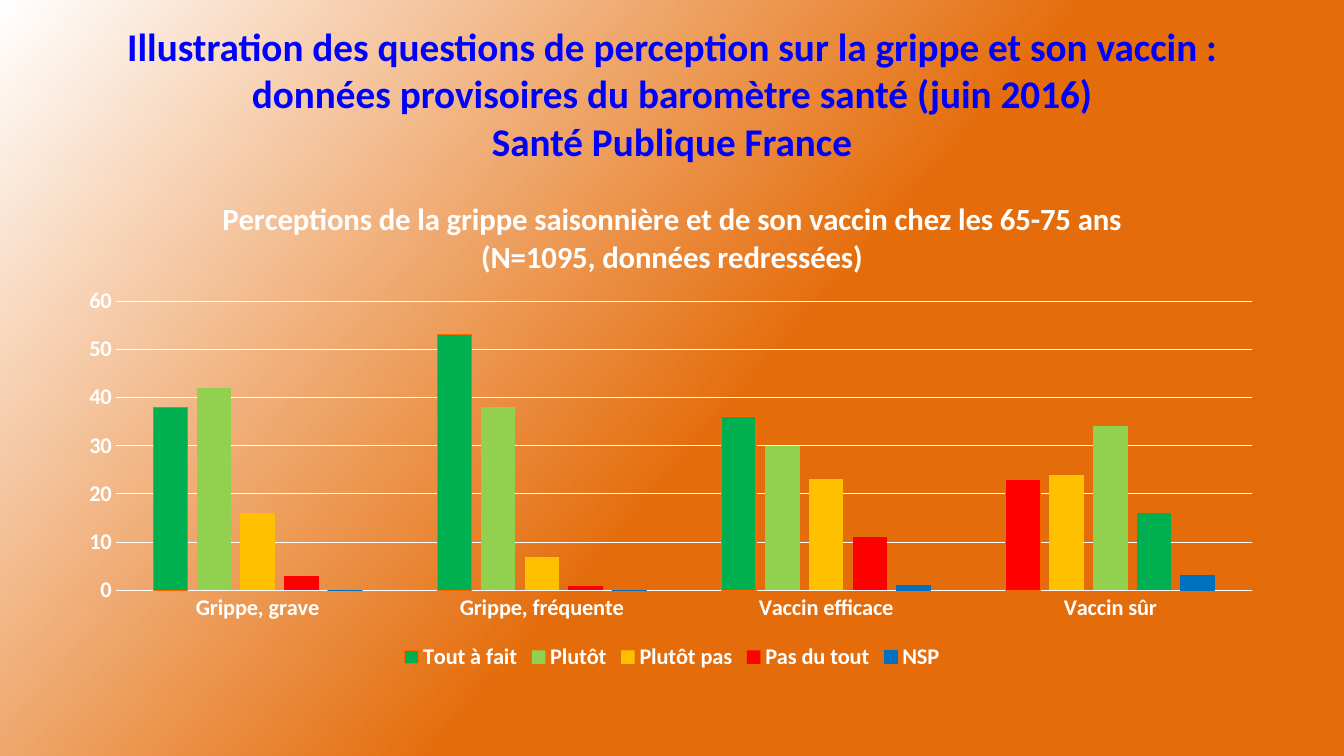
from dataclasses import dataclass

from lxml import etree
from pptx import Presentation
from pptx import util as u
from pptx.chart import data as chart_data
from pptx.dml import color
from pptx.enum import chart as kinds
from pptx.enum import text
from pptx.oxml import ns


@dataclass(frozen=True)
class Theme:
    font: str = "Calibri"
    orange: str = "E46C0A"
    white: str = "FFFFFF"
    blue: str = "0000FF"
    outline: str = "FF6600"
    green: str = "00B050"
    lime: str = "92D050"
    amber: str = "FFC000"
    red: str = "FF0000"
    azure: str = "0070C0"
    heading: int = 28
    chart_heading: int = 22
    label: int = 16
    base: int = 10
    hairline: float = 0.75


THEME = Theme()
CATEGORIES = ["Grippe, grave", "Grippe, fréquente", "Vaccin efficace", "Vaccin sûr"]
REVERSED_CATEGORY = CATEGORIES.index("Vaccin sûr")
SERIES = [
    ("Tout à fait", [38, 53, 36, 23], THEME.green, THEME.red, THEME.outline),
    ("Plutôt", [42, 38, 30, 24], THEME.lime, THEME.amber, None),
    ("Plutôt pas", [16, 7, 23, 34], THEME.amber, THEME.lime, None),
    ("Pas du tout", [3, 1, 11, 16], THEME.red, THEME.green, None),
    ("NSP", [0, 0, 1, 3], THEME.azure, THEME.azure, THEME.azure),
]


def rgb(value):
    return color.RGBColor.from_string(value)


def style_font(font, size, tint=THEME.white, bold=True):
    font.name = THEME.font
    font.size = u.Pt(size)
    font.bold = bold
    font.color.rgb = rgb(tint)


def write(para, words, **style):
    para.text = words
    para.alignment = text.PP_ALIGN.CENTER
    for span in para.runs:
        style_font(span.font, **style)


def style_line(line, tint):
    if tint is None:
        line.fill.background()
        return
    line.color.rgb = rgb(tint)
    line.width = u.Pt(THEME.hairline)


def paint(form, fill, outline):
    form.fill.solid()
    form.fill.fore_color.rgb = rgb(fill)
    style_line(form.line, outline)


def paint_background(page):
    fill = page.background.fill
    fill.gradient()
    fill.gradient_angle = 139
    stops = [(0.45, THEME.orange), (1, THEME.white)]
    for stop, (position, tint) in zip(fill.gradient_stops, stops):
        stop.position = position
        stop.color.rgb = rgb(tint)


def add_heading(page, words):
    box = page.shapes.add_textbox(u.Pt(48), u.Pt(21.6), u.Pt(864), u.Pt(90))
    frame = box.text_frame
    frame.word_wrap = True
    frame.vertical_anchor = text.MSO_ANCHOR.MIDDLE
    write(frame.paragraphs[0], words, size=THEME.heading, tint=THEME.blue)


def place_plot(chart, **fractions):
    plot_area = chart.plots[0]._element.getparent()
    for old in plot_area.findall(ns.qn("c:layout")):
        plot_area.remove(old)
    layout = etree.Element(ns.qn("c:layout"))
    plot_area.insert(0, layout)
    manual = etree.SubElement(layout, ns.qn("c:manualLayout"))
    settings = {"layoutTarget": "inner", "xMode": "edge", "yMode": "edge", **fractions}
    for name, value in settings.items():
        etree.SubElement(manual, ns.qn(f"c:{name}")).set("val", str(value))


def style_axis(axis, line):
    axis.major_tick_mark = kinds.XL_TICK_MARK.NONE
    axis.minor_tick_mark = kinds.XL_TICK_MARK.NONE
    style_font(axis.tick_labels.font, THEME.label)
    style_line(axis.format.line, line)


def add_column_chart(page, heading):
    data = chart_data.CategoryChartData()
    data.categories = CATEGORIES
    for name, values, *_ in SERIES:
        data.add_series(name, values)
    chart = page.shapes.add_chart(
        kinds.XL_CHART_TYPE.COLUMN_CLUSTERED,
        u.Pt(48), u.Pt(126), u.Pt(864), u.Pt(356.4), data,
    ).chart
    style_font(chart.font, THEME.base, bold=False)
    write(chart.chart_title.text_frame.paragraphs[0], heading, size=THEME.chart_heading)
    chart.chart_title.include_in_layout = False

    style_axis(chart.category_axis, THEME.white)
    values_axis = chart.value_axis
    style_axis(values_axis, None)
    values_axis.minimum_scale = 0
    values_axis.maximum_scale = 60
    values_axis.major_unit = 10
    style_line(values_axis.major_gridlines.format.line, THEME.white)

    chart.has_legend = True
    chart.legend.position = kinds.XL_LEGEND_POSITION.BOTTOM
    chart.legend.include_in_layout = False
    style_font(chart.legend.font, THEME.label)

    plot = chart.plots[0]
    plot.vary_by_categories = False
    plot.gap_width = 219
    plot.overlap = -27
    for series, (_, _, fill, reversed_fill, outline) in zip(plot.series, SERIES):
        series.invert_if_negative = False
        paint(series.format, fill, outline)
        if reversed_fill != fill:
            paint(series.points[REVERSED_CATEGORY].format, reversed_fill, outline)
    place_plot(chart, x=0.04, y=0.25, w=0.94, h=0.58)


def main():
    deck = Presentation()
    deck.slide_width, deck.slide_height = u.Pt(960), u.Pt(540)
    page = deck.slides.add_slide(deck.slide_layouts[6])
    paint_background(page)
    add_heading(
        page,
        "Illustration des questions de perception sur la grippe et son vaccin : "
        "données provisoires du baromètre santé (juin 2016)\nSanté Publique France",
    )
    add_column_chart(
        page,
        "Perceptions de la grippe saisonnière et de son vaccin chez les 65-75 ans "
        "(N=1095, données redressées)",
    )
    deck.save("out.pptx")


if __name__ == "__main__":
    main()
